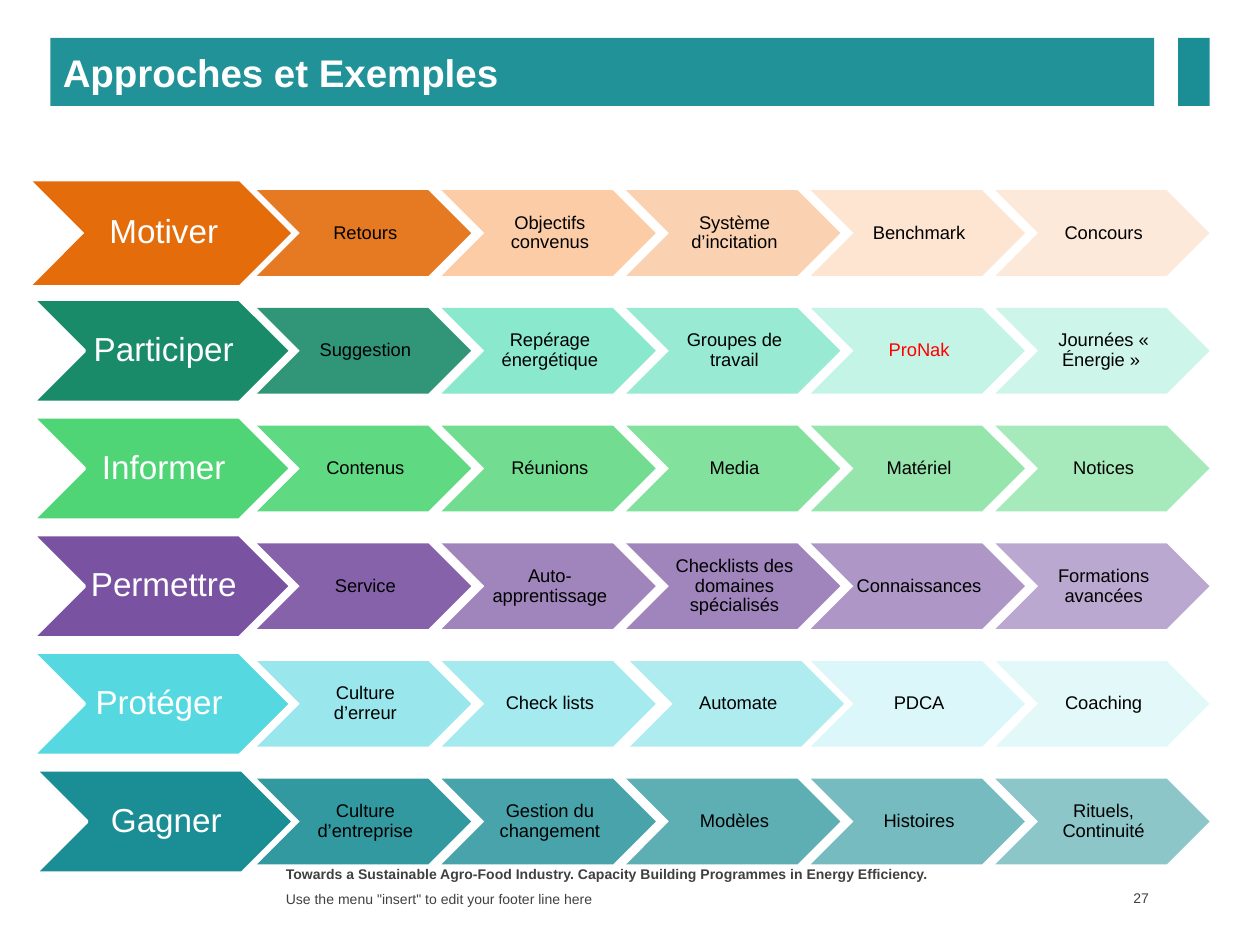
from dataclasses import dataclass

from lxml.etree import SubElement
from pptx import Presentation
from pptx.dml.color import RGBColor
from pptx.enum.shapes import MSO_SHAPE
from pptx.enum.text import MSO_ANCHOR, PP_ALIGN
from pptx.oxml.ns import qn
from pptx.util import Inches, Pt

FONT = "Arial"
WHITE, BLACK, RED, GREY = "FFFFFF", "000000", "FF0000", "404040"
TEAL, TITLE = "1B8E95", "209298"

# Grid of the chevrons, in inches
TOP, ROW_GAP = 1.44, 0.934
HEAD_W, HEAD_H = 2.05, 0.82
STEP_X, STEP_GAP = 2.04, 1.465
STEP_W, STEP_H = 1.7, 0.68
ALPHAS = (90, 80, 70, 60, 50)


@dataclass
class Row:
    name: str
    fill: str
    steps: tuple[str, ...]
    tints: tuple[str, ...]
    alphas: tuple[int, ...] = ALPHAS
    left: float = 0.26
    edge: str | None = WHITE
    nudge: tuple[float, ...] = (0, 0, 0, 0, 0)


ROWS = [
    Row("Motiver", "E46C0A",
        ("Retours", "Objectifs convenus", "Système d’incitation",
         "Benchmark", "Concours"),
        ("E46C0A", "FAC090", "FAC090", "FCD5B5", "FCD5B5"), edge=None),
    Row("Participer", "1A8B69",
        ("Suggestion", "Repérage énergétique", "Groupes de travail",
         "ProNak", "Journées « Énergie » "),
        ("1A8B69", "6DE3C0", "6DE3C0", "9DEDD5", "9DEDD5")),
    Row("Informer", "4FD576",
        ("Contenus", "Réunions", "Media", "Matériel", "Notices"),
        ("4FD576",) * 5),
    Row("Permettre", "7952A2",
        ("Service", "Auto-apprentissage",
         "Checklists des domaines spécialisés", "Connaissances",
         "Formations avancées"),
        ("7952A2",) * 5, alphas=(90, 70, 70, 60, 50)),
    Row("Protéger ", "55D8E0",
        ("Culture d’erreur", "Check lists", "Automate", "PDCA", "Coaching"),
        ("8EE5EB", "8EE5EB", "8EE5EB", "C6F2F5", "C6F2F5"),
        nudge=(0, 0, 0.03, 0, 0)),
    Row("Gagner", TEAL,
        ("Culture d’entreprise", "Gestion du changement", "Modèles",
         "Histoires", "Rituels, Continuité"),
        (TEAL,) * 5, left=0.28),
]


def tone(code: str) -> RGBColor:
    return RGBColor.from_string(code)


def write(shape, text: str, *, size: float, color: str, bold: bool = False,
          align=PP_ALIGN.LEFT, anchor=MSO_ANCHOR.MIDDLE, lead: float = 1.0,
          pad: tuple[float, ...] = (0.1, 0.05, 0.1, 0.05)) -> None:
    frame = shape.text_frame
    frame.word_wrap = True
    frame.vertical_anchor = anchor
    (frame.margin_left, frame.margin_top,
     frame.margin_right, frame.margin_bottom) = map(Inches, pad)
    para = frame.paragraphs[0]
    para.alignment, para.line_spacing = align, lead
    run = para.add_run()
    run.text = text
    font = run.font
    font.name, font.size, font.bold = FONT, Pt(size), bold
    font.color.rgb = tone(color)


def draw(slide, kind, box: tuple[float, ...], fill: str, *,
         alpha: int = 100, edge: str | None = None):
    shape = slide.shapes.add_shape(kind, *map(Inches, box))
    shape.shadow.inherit = False
    shape.fill.solid()
    shape.fill.fore_color.rgb = tone(fill)
    if alpha < 100:
        color = shape.fill._xPr.find(qn("a:solidFill"))[0]
        SubElement(color, qn("a:alpha"), val=str(alpha * 1000))
    if edge:
        shape.line.color.rgb = tone(edge)
        shape.line.width = Pt(2)
    else:
        shape.line.fill.background()
    return shape


def note(slide, text: str, box: tuple[float, ...], **style) -> None:
    write(slide.shapes.add_textbox(*map(Inches, box)), text,
          size=8, color=GREY, **style)


def draw_row(slide, row: Row, top: float) -> None:
    head = draw(slide, MSO_SHAPE.CHEVRON, (row.left, top, HEAD_W, HEAD_H),
                row.fill, edge=row.edge)
    write(head, row.name, size=19, color=WHITE, align=PP_ALIGN.CENTER,
          lead=0.9, pad=(0.03, 0.01, 0, 0.01))
    y = top + (HEAD_H - STEP_H) / 2
    cells = zip(row.steps, row.tints, row.alphas, row.nudge)
    for i, (text, tint, alpha, shift) in enumerate(cells):
        x = STEP_X + i * STEP_GAP + shift
        step = draw(slide, MSO_SHAPE.CHEVRON, (x, y, STEP_W, STEP_H),
                    tint, alpha=alpha)
        write(step, text, size=10.5, color=RED if text == "ProNak" else BLACK,
              align=PP_ALIGN.CENTER, lead=0.9, pad=(0.02, 0.01, 0, 0.01))


def main() -> None:
    deck = Presentation()
    deck.slide_width, deck.slide_height = Inches(10), Inches(7.5)
    slide = deck.slides.add_slide(deck.slide_layouts[6])

    # Footer
    note(slide, "Towards a Sustainable Agro-Food Industry. "
         "Capacity Building Programmes in Energy Efficiency.",
         (2.17, 6.82, 5.5, 0.21), bold=True, anchor=MSO_ANCHOR.TOP)
    note(slide, 'Use the menu "insert" to edit your footer line here',
         (2.17, 7.04, 5.5, 0.19))
    note(slide, "27", (8.6, 7.03, 0.56, 0.2), align=PP_ALIGN.RIGHT,
         pad=(0.1, 0.05, 0.04, 0.05))

    # Chevron rows
    for i, row in enumerate(ROWS):
        draw_row(slide, row, TOP + i * ROW_GAP)

    # Title bar
    bar = draw(slide, MSO_SHAPE.RECTANGLE, (0.4, 0.3, 8.76, 0.54), TITLE)
    write(bar, "Approches et Exemples", size=22, color=WHITE, bold=True)
    draw(slide, MSO_SHAPE.RECTANGLE, (9.35, 0.3, 0.25, 0.54), TEAL)

    deck.save("out.pptx")


if __name__ == "__main__":
    main()
